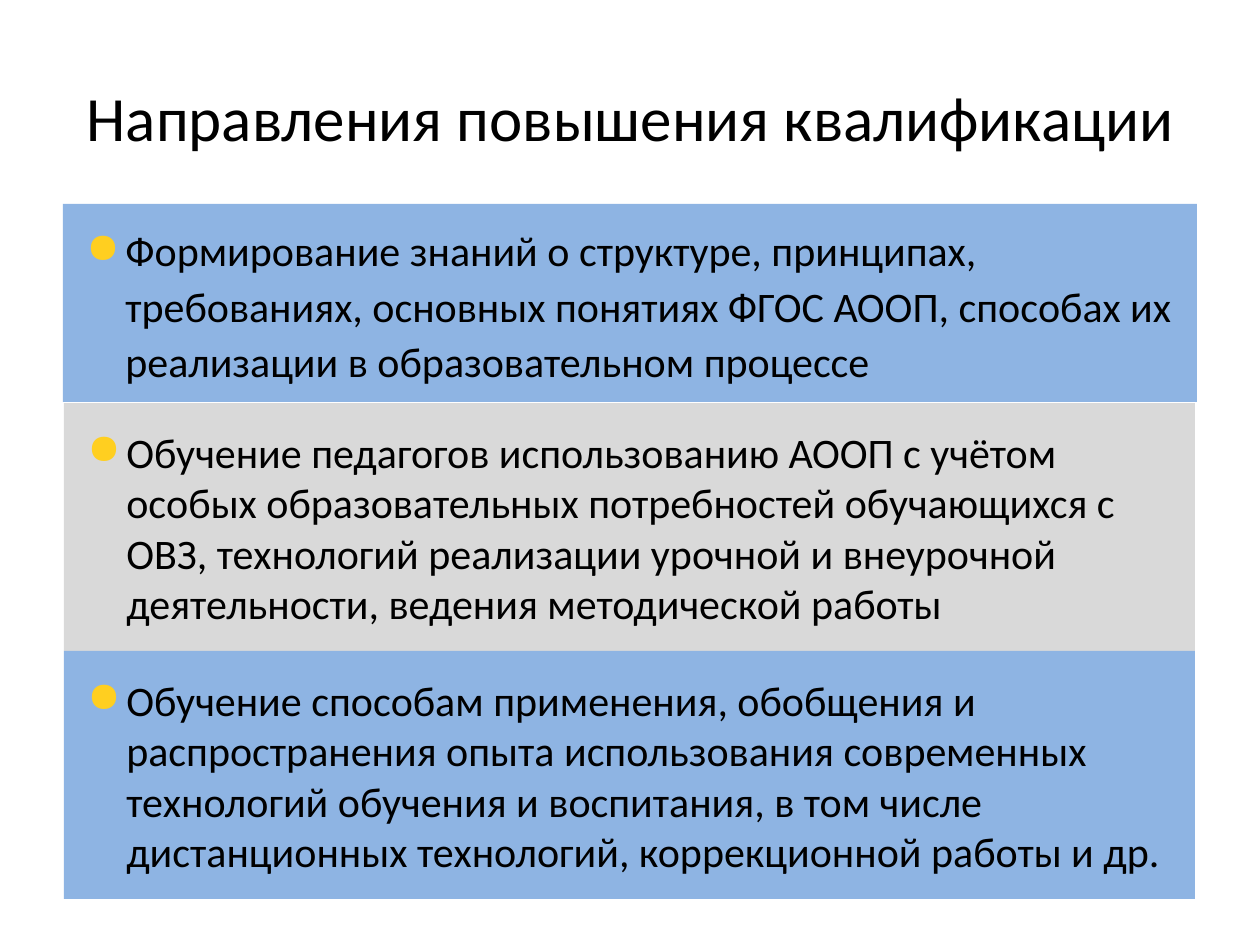
import pptx
import pptx.dml.color
import pptx.enum.shapes
import pptx.enum.text
import pptx.oxml
import pptx.oxml.ns
import pptx.util

PX = 914400 / 126
FONT = "Calibri"
COLORS = {"text": "000000", "blue": "8EB4E3", "gray": "D9D9D9", "bullet": "FFCF20"}
TITLE = "Направления повышения квалификации"
BANDS = [
    ((63, 204, 1134, 198), "blue", 1.1,
     "Формирование знаний о структуре, принципах, требованиях, основных понятиях "
     "ФГОС АООП, способах их реализации в образовательном процессе"),
    ((64, 403, 1131, 248), "gray", 1.0,
     "Обучение педагогов использованию АООП с учётом особых образовательных "
     "потребностей обучающихся с ОВЗ, технологий реализации урочной и внеурочной "
     "деятельности, ведения методической работы"),
    ((64, 651, 1131, 248), "blue", 1.0,
     "Обучение способам применения, обобщения и распространения опыта использования "
     "современных технологий обучения и воспитания, в том числе дистанционных "
     "технологий, коррекционной работы и др."),
]


def emu(px):
    return pptx.util.Emu(round(px * PX))


def color(name):
    return pptx.dml.color.RGBColor.from_string(COLORS[name])


class SlideBuilder:
    def __init__(self, slide):
        self.slide = slide

    def add_text(self, shape, text, size):
        """Fill the shape with one left-aligned, hanging paragraph and return it."""
        frame = shape.text_frame
        frame.word_wrap = True
        frame.auto_size = pptx.enum.text.MSO_AUTO_SIZE.NONE
        frame.vertical_anchor = pptx.enum.text.MSO_ANCHOR.MIDDLE
        paragraph = frame.paragraphs[0]
        paragraph.alignment = pptx.enum.text.PP_ALIGN.LEFT
        properties = paragraph._p.get_or_add_pPr()
        properties.set("marL", str(emu(50)))
        properties.set("indent", str(emu(-39)))
        run = paragraph.add_run()
        run.text = text
        run.font.name = FONT
        run.font.size = pptx.util.Pt(size)
        run.font.color.rgb = color("text")
        return paragraph

    def add_bullet(self, paragraph):
        namespace = pptx.oxml.ns.nsdecls("a")
        for xml in (
            f'<a:buClr {namespace}><a:srgbClr val="{COLORS["bullet"]}"/></a:buClr>',
            f'<a:buChar {namespace} char="●"/>',
        ):
            paragraph._p.get_or_add_pPr().append(pptx.oxml.parse_xml(xml))

    def title(self, box, text):
        shape = self.slide.shapes.title
        shape.left, shape.top, shape.width, shape.height = map(emu, box)
        self.add_text(shape, text, 36)

    def band(self, box, fill, line_spacing, text):
        shape = self.slide.shapes.add_shape(
            pptx.enum.shapes.MSO_SHAPE.RECTANGLE, *map(emu, box))
        shape.shadow.inherit = False
        shape.fill.solid()
        shape.fill.fore_color.rgb = color(fill)
        shape.line.fill.background()
        paragraph = self.add_text(shape, text, 24)
        self.add_bullet(paragraph)
        paragraph.line_spacing = line_spacing
        paragraph.space_after = pptx.util.Pt(12)


def main():
    presentation = pptx.Presentation()
    presentation.slide_width = emu(1260)
    presentation.slide_height = emu(945)
    title_only = presentation.slide_layouts[5]
    builder = SlideBuilder(presentation.slides.add_slide(title_only))
    builder.title((63, 37, 1134, 158), TITLE)
    for band in BANDS:
        builder.band(*band)
    presentation.save("out.pptx")


if __name__ == "__main__":
    main()
